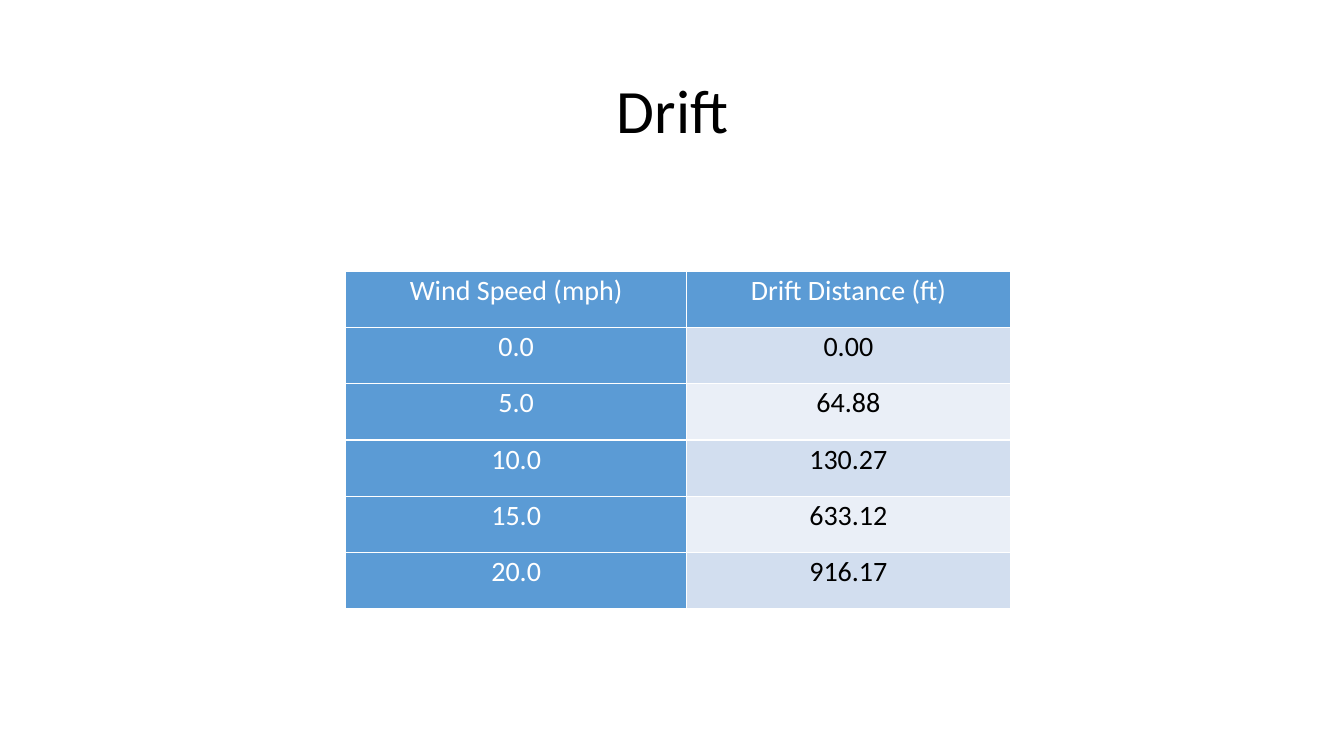
import dataclasses

import pptx
import pptx.dml.color
import pptx.enum.text
import pptx.oxml
import pptx.oxml.ns
import pptx.util

Inches = pptx.util.Inches


@dataclasses.dataclass(frozen=True)
class Theme:
    font: str = "Calibri"
    title_size: int = 44
    table_size: int = 20
    dark: str = "000000"
    light: str = "FFFFFF"
    accent: str = "5B9BD5"
    bands: tuple = ("D2DEEF", "EAEFF7")
    border_width: int = 1


THEME = Theme()

DRIFT_ROWS = [
    ("Wind Speed (mph)", "Drift Distance (ft)"),
    ("0.0", "0.00"),
    ("5.0", "64.88"),
    ("10.0", "130.27"),
    ("15.0", "633.12"),
    ("20.0", "916.17"),
]


def rgb(colour):
    return pptx.dml.color.RGBColor.from_string(colour)


def write_text(text_frame, text, *, size, colour, line_spacing):
    text_frame.word_wrap = True
    paragraph = text_frame.paragraphs[0]
    paragraph.alignment = pptx.enum.text.PP_ALIGN.CENTER
    paragraph.line_spacing = line_spacing
    run = paragraph.add_run()
    run.text = text
    run.font.name = THEME.font
    run.font.size = pptx.util.Pt(size)
    run.font.color.rgb = rgb(colour)


def add_title(slide, text):
    box = slide.shapes.add_textbox(Inches(0.92), Inches(0.4), Inches(11.5), Inches(1.45))
    box.text_frame.vertical_anchor = pptx.enum.text.MSO_ANCHOR.MIDDLE
    write_text(box.text_frame, text, size=THEME.title_size, colour=THEME.dark, line_spacing=0.9)


def add_borders(cell):
    properties = cell._tc.get_or_add_tcPr()
    width = pptx.util.Pt(THEME.border_width)
    for side in ("lnL", "lnR", "lnT", "lnB"):
        properties.append(pptx.oxml.parse_xml(
            f'<a:{side} {pptx.oxml.ns.nsdecls("a")} w="{width}"><a:solidFill>'
            f'<a:srgbClr val="{THEME.light}"/></a:solidFill></a:{side}>'
        ))


def format_cell(cell, text, fill, colour):
    cell.margin_left = cell.margin_right = Inches(0.07)
    cell.margin_top = cell.margin_bottom = 0
    add_borders(cell)
    cell.fill.solid()
    cell.fill.fore_color.rgb = rgb(fill)
    write_text(cell.text_frame, text, size=THEME.table_size, colour=colour, line_spacing=1.07)


def add_drift_table(slide, rows):
    column_widths = (3.38, 3.21)
    table = slide.shapes.add_table(
        len(rows), len(column_widths),
        Inches(3.43), Inches(2.69), Inches(sum(column_widths)), Inches(3.35),
    ).table
    for column, width in zip(table.columns, column_widths):
        column.width = Inches(width)
    for row_index, row in enumerate(rows):
        for column_index, text in enumerate(row):
            is_heading = row_index == 0 or column_index == 0
            fill = THEME.accent if is_heading else THEME.bands[(row_index - 1) % 2]
            colour = THEME.light if is_heading else THEME.dark
            format_cell(table.cell(row_index, column_index), text, fill, colour)


def main():
    presentation = pptx.Presentation()
    presentation.slide_width = Inches(13.33)
    presentation.slide_height = Inches(7.5)
    slide = presentation.slides.add_slide(presentation.slide_layouts[6])
    add_title(slide, "Drift")
    add_drift_table(slide, DRIFT_ROWS)
    presentation.save("out.pptx")


if __name__ == "__main__":
    main()
